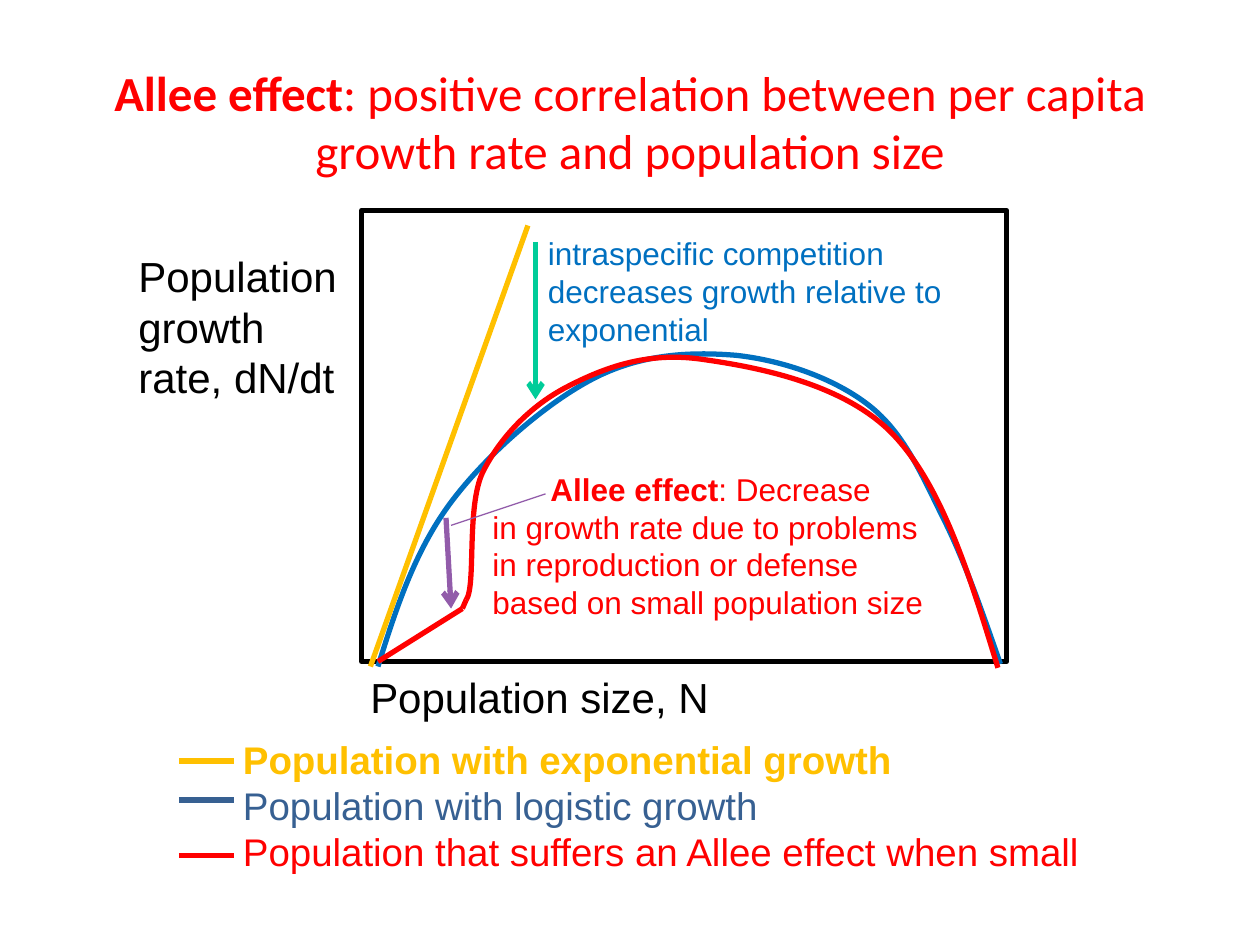
from lxml.etree import SubElement
from pptx import Presentation
from pptx.dml.color import RGBColor
from pptx.enum.shapes import MSO_CONNECTOR, MSO_SHAPE
from pptx.enum.text import MSO_ANCHOR, PP_ALIGN
from pptx.oxml.ns import qn
from pptx.util import Inches, Pt

COLORS = {
    "black": "000000", "white": "FFFFFF", "allee": "FF0000",
    "logistic": "0070C0", "legend_blue": "376092", "exponential": "FFC000",
    "competition": "00CC99", "decline": "925CAA",
}


def color(name):
    return RGBColor.from_string(COLORS[name])


def add_text(left, top, width, height, lines, size, wrap=True):
    """Text box; each line is (text, colour, bold)."""
    frame = slide.shapes.add_textbox(
        Inches(left), Inches(top), Inches(width), Inches(height)).text_frame
    frame.word_wrap = wrap
    frame.text = "\n".join(text for text, _, _ in lines)
    for paragraph, (_, name, bold) in zip(frame.paragraphs, lines):
        font = paragraph.runs[0].font
        font.name, font.size, font.bold = "Arial", Pt(size), bold
        font.color.rgb = color(name)
    return frame


prs = Presentation()
prs.slide_width, prs.slide_height = Inches(10), Inches(7.5)
slide = prs.slides.add_slide(prs.slide_layouts[5])

# Title
title = slide.shapes.title
title.left, title.top = Inches(0.75), Inches(0.42)
title.width, title.height = Inches(8.5), Inches(1.08)
title.text_frame.vertical_anchor = MSO_ANCHOR.MIDDLE
heading = title.text_frame.paragraphs[0]
heading.text = "Allee effect"
heading.alignment = PP_ALIGN.CENTER
heading.add_run().text = (
    ": positive correlation between per capita growth rate and population size")
for run, bold in zip(heading.runs, (True, False)):
    run.font.name, run.font.size, run.font.bold = "Calibri", Pt(28), bold
    run.font.color.rgb = color("allee")

# Plot frame and axis labels
plot = slide.shapes.add_shape(
    MSO_SHAPE.RECTANGLE, Inches(2.87), Inches(1.67), Inches(5.12), Inches(3.58))
plot.shadow.inherit = False
plot.fill.solid()
plot.fill.fore_color.rgb = color("white")
plot.line.color.rgb = color("black")
plot.line.width = Pt(3)
add_text(1, 1.94, 1.88, 1.31,
         [("Population growth rate, dN/dt", "black", False)], 24)
add_text(2.84, 5.28, 2.91, 0.51,
         [("Population size, N", "black", False)], 24, wrap=False)

# Growth curves: a start point, then two control points and an end per segment
curves = [
    ("logistic", [
        (3, 5.29), (3.14, 4.84), (3.29, 4.38), (3.57, 4),
        (3.85, 3.62), (4.32, 3.21), (4.7, 3.01),
        (5.08, 2.81), (5.47, 2.79), (5.84, 2.82),
        (6.21, 2.86), (6.62, 3), (6.9, 3.22),
        (7.18, 3.44), (7.32, 3.78), (7.49, 4.12),
        (7.66, 4.46), (7.8, 4.87), (7.94, 5.27)]),
    ("allee", [
        (7.92, 5.3), (7.7, 4.58), (7.48, 3.86), (7.09, 3.45),
        (6.7, 3.04), (5.99, 2.91), (5.56, 2.85),
        (5.13, 2.79), (4.79, 2.92), (4.5, 3.07),
        (4.21, 3.22), (3.97, 3.47), (3.83, 3.75),
        (3.7, 4.03), (3.78, 4.65), (3.7, 4.76)]),
]
for name, knots in curves:
    start, *rest = [(Inches(x), Inches(y)) for x, y in knots]
    builder = slide.shapes.build_freeform(*start)
    builder.add_line_segments(rest, close=False)
    curve = builder.convert_to_shape()
    # Merge every three straight segments into one Bézier segment
    segments = list(curve._element.iter(qn("a:lnTo")))
    for i in range(0, len(segments), 3):
        bezier = SubElement(segments[i].getparent(), qn("a:cubicBezTo"))
        for segment in segments[i:i + 3]:
            bezier.append(segment[0])
            segment.getparent().remove(segment)
    curve.shadow.inherit = False
    curve.fill.background()
    curve.line.color.rgb = color(name)
    curve.line.width = Pt(3)

# Straight lines: start, end, colour, width, arrowhead
lines = [
    ((2.94, 5.29), (4.19, 1.79), "exponential", 3, False),
    ((4.25, 1.92), (4.25, 3.17), "competition", 3, True),
    ((3.54, 4.11), (3.58, 4.83), "decline", 3, True),
    ((3.58, 4.17), (4.33, 3.92), "decline", 0.75, False),
    ((3, 5.25), (3.67, 4.83), "allee", 3, False),
    ((3.7, 4.76), (3.67, 4.83), "allee", 3, False),
]
# Legend keys
lines += [((1.42, y), (1.86, y), name, 3, False) for y, name in
          ((6.04, "exponential"), (6.35, "legend_blue"), (6.79, "allee"))]
for start, end, name, width, arrow in lines:
    line = slide.shapes.add_connector(
        MSO_CONNECTOR.STRAIGHT, *(Inches(v) for v in start + end))
    line.line.color.rgb = color(name)
    line.line.width = Pt(width)
    if arrow:
        SubElement(line.line._get_or_add_ln(), qn("a:tailEnd"), type="arrow")
    SubElement(line._element.spPr, qn("a:effectLst"))

# Notes inside the plot
add_text(4.25, 1.81, 3.56, 1.01,
         [("intraspecific competition decreases growth relative to exponential",
           "logistic", False)], 18)
allee_note = add_text(3.81, 3.68, 3.81, 1.32,
                      [("Allee effect", "allee", True)], 18).paragraphs[0]
allee_note._p.get_or_add_pPr().set("indent", str(Inches(0.46)))
allee_note.add_run().text = ": Decrease"
allee_note.add_line_break()
allee_note.add_run().text = (
    "in growth rate due to problems in reproduction or defense "
    "based on small population size")
for run in allee_note.runs[1:]:
    run.font.name, run.font.size, run.font.bold = "Arial", Pt(18), False
    run.font.color.rgb = color("allee")

# Legend text
add_text(1.83, 5.79, 7.17, 1.21, [
    ("Population with exponential growth", "exponential", True),
    ("Population with logistic growth", "legend_blue", False),
    ("Population that suffers an Allee effect when small", "allee", False),
], 22)

prs.save("out.pptx")
